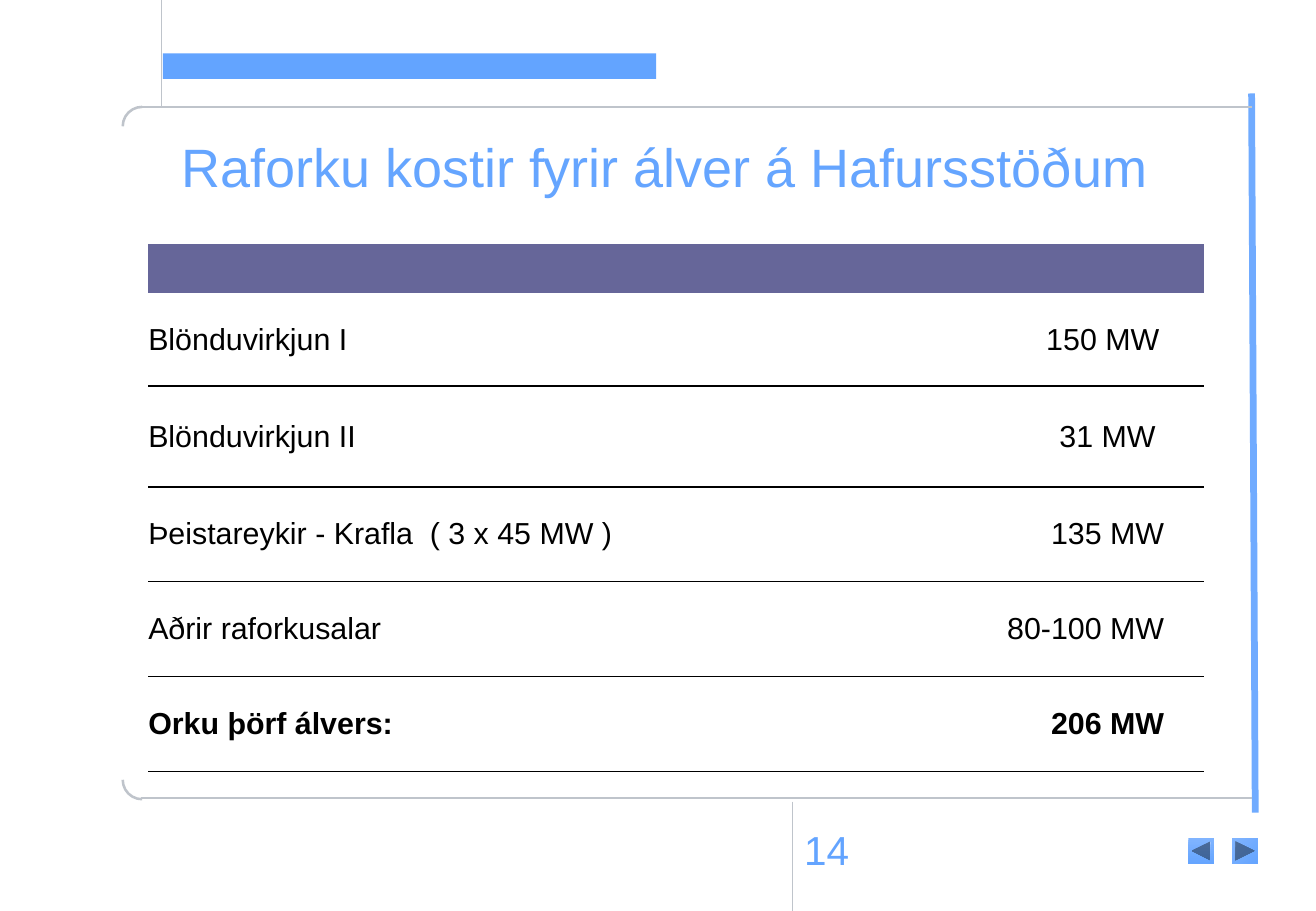
from lxml import etree
from pptx import Presentation
from pptx.dml.color import RGBColor
from pptx.enum.shapes import MSO_CONNECTOR, MSO_SHAPE
from pptx.enum.text import MSO_ANCHOR, MSO_AUTO_SIZE, PP_ALIGN
from pptx.oxml import parse_xml
from pptx.oxml.ns import nsdecls, qn
from pptx.util import Inches, Pt

STRAIGHT = MSO_CONNECTOR.STRAIGHT
RECTANGLE, ARC = MSO_SHAPE.RECTANGLE, MSO_SHAPE.ARC
NEXT = MSO_SHAPE.ACTION_BUTTON_FORWARD_OR_NEXT
PREVIOUS = MSO_SHAPE.ACTION_BUTTON_BACK_OR_PREVIOUS
MIDDLE, NO_AUTOFIT = MSO_ANCHOR.MIDDLE, MSO_AUTO_SIZE.NONE
LEFT, RIGHT = PP_ALIGN.LEFT, PP_ALIGN.RIGHT

FONT, BLUE, PALE_BLUE, GREY = "Arial", "63A4FF", "70ABFF", "BFC4CB"
PURPLE, BLACK = "666699", "000000"
NO_TABLE_STYLE = "{2D5ABB26-0587-4C30-8999-92F81FD0307C}"
ARC_DEGREE = 0.6

POWER_ROWS = [
    ("Blönduvirkjun I", "150 MW", 0.37),
    ("Blönduvirkjun II", "31 MW", 0.4),
    ("Þeistareykir - Krafla  ( 3 x 45 MW )", "135 MW", 0.33),
    ("Aðrir raforkusalar", "80-100 MW", 0.33),
    ("Orku þörf álvers:", "206 MW", 0.33),
]
COLUMN_WIDTHS = [6.75, 1.94]
ROW_HEIGHTS = [0.4, 0.77, 0.83, 0.78, 0.78, 0.78]


def color(value):
    """Turn a hex string into a colour."""
    return RGBColor.from_string(value)


def apply(target, values):
    """Set each attribute named in a dict."""
    for name, value in values.items():
        setattr(target, name, value)


class SlideBuilder:
    """Holds the style and the current slide."""

    def __init__(self, slide, font_name):
        """Keep the slide and its font."""
        self.slide = slide
        self.font_name = font_name

    def set_text(self, frame, text, size, hex_color, bold=False, alignment=LEFT):
        """Fill a text frame with one formatted paragraph."""
        frame.text = text
        paragraph = frame.paragraphs[0]
        paragraph.alignment = alignment
        apply(paragraph.font, {"name": self.font_name, "size": Pt(size), "bold": bold})
        paragraph.font.color.rgb = color(hex_color)

    def title(self, text, box, size, hex_color):
        """Place and format the title placeholder."""
        title = self.slide.shapes.title
        apply(title, dict(zip(("left", "top", "width", "height"), map(Inches, box))))
        apply(title.text_frame, {"vertical_anchor": MIDDLE, "word_wrap": True,
                                 "auto_size": NO_AUTOFIT})
        self.set_text(title.text_frame, text, size, hex_color)

    def text(self, text, box, size, hex_color):
        """Add a wrapping text box."""
        shape = self.slide.shapes.add_textbox(*map(Inches, box))
        shape.text_frame.word_wrap = True
        self.set_text(shape.text_frame, text, size, hex_color)

    def line(self, start, end, hex_color, width):
        """Add a straight line without shadow."""
        connector = self.slide.shapes.add_connector(STRAIGHT, *map(Inches, start + end))
        connector.line.color.rgb = color(hex_color)
        connector.line.width = Pt(width)
        etree.SubElement(connector._element.spPr, qn("a:effectLst"))

    def shape(self, kind, box):
        """Add a preset shape without shadow or outline."""
        shape = self.slide.shapes.add_shape(kind, *map(Inches, box))
        shape.shadow.inherit = False
        shape.line.fill.background()
        return shape

    def bar(self, box, hex_color):
        """Add a solid rectangle."""
        fill = self.shape(RECTANGLE, box).fill
        fill.solid()
        fill.fore_color.rgb = color(hex_color)

    def corner(self, box, start_degree, hex_color, width):
        """Add a quarter arc starting at an angle."""
        arc = self.shape(ARC, box)
        arc.fill.background()
        arc.line.color.rgb = color(hex_color)
        arc.line.width = Pt(width)
        arc.adjustments[0] = start_degree * ARC_DEGREE
        arc.adjustments[1] = (start_degree + 90) * ARC_DEGREE

    def button(self, kind, box, angle):
        """Add a navigation button with a blue gradient."""
        fill = self.shape(kind, box).fill
        fill.gradient()
        fill.gradient_angle = angle
        for stop, hex_color in zip(fill.gradient_stops, ("80B4FF", "65A5FF")):
            stop.color.rgb = color(hex_color)

    def bottom_border(self, cell, hex_color, width):
        """Draw the lower edge of a cell."""
        cell._tc.get_or_add_tcPr().insert(0, parse_xml(
            f'<a:lnB {nsdecls("a")} w="{Pt(width)}"><a:solidFill>'
            f'<a:srgbClr val="{hex_color}"/></a:solidFill></a:lnB>'))

    def table(self, rows, left, top, widths, heights):
        """Add a ruled table under a plain header band."""
        size = (left, top, sum(widths), sum(heights))
        table = self.slide.shapes.add_table(
            len(heights), len(widths), *map(Inches, size)).table
        apply(table, {"first_row": False, "horz_banding": False})
        table._tbl.tblPr.find(qn("a:tableStyleId")).text = NO_TABLE_STYLE
        for column, width in zip(table.columns, widths):
            column.width = Inches(width)
        for row, height in zip(table.rows, heights):
            row.height = Inches(height)
        for cell in table.iter_cells():
            apply(cell, {"margin_left": 0, "margin_right": 0, "margin_top": 0,
                         "margin_bottom": 0, "vertical_anchor": MIDDLE})
        for cell in table.rows[0].cells:
            cell.fill.solid()
            cell.fill.fore_color.rgb = color(PURPLE)
        for index, (label, value, indent) in enumerate(rows, start=1):
            bold = index == len(rows)
            cells = table.rows[index].cells
            for cell, text, alignment in zip(cells, (label, value), (LEFT, RIGHT)):
                self.set_text(cell.text_frame, text, 18, BLACK, bold, alignment)
                cell.fill.background()
                self.bottom_border(cell, BLACK, 1)
            cells[1].margin_right = Inches(indent)


def main():
    """Build and save the slide."""
    presentation = Presentation()
    apply(presentation, {"slide_width": Inches(10.83), "slide_height": Inches(7.5)})
    slide = presentation.slides.add_slide(presentation.slide_layouts[5])
    builder = SlideBuilder(slide, FONT)

    builder.line((10.3, 0.77), (10.33, 6.69), PALE_BLUE, 4)
    for top, edge, start_degree in ((0.88, 0.88, 180), (6.26, 6.57, 90)):
        builder.corner((1.01, top, 0.32, 0.32), start_degree, GREY, 1.5)
        builder.line((1.16, edge), (10.3, edge), GREY, 1.5)
    builder.line((1.33, 0), (1.33, 0.88), GREY, 0.75)
    builder.line((6.52, 6.6), (6.52, 7.5), GREY, 0.75)
    builder.bar((1.34, 0.44, 4.06, 0.21), BLUE)
    for kind, left, angle in ((NEXT, 10.14, 315), (PREVIOUS, 9.78, 270)):
        builder.button(kind, (left, 6.9, 0.21, 0.21), angle)

    builder.text("14", (6.52, 6.74, 1.26, 0.52), 24, BLUE)
    builder.title("Raforku kostir fyrir álver á Hafursstöðum",
                  (1.39, 1.1, 8.82, 0.53), 32, "65A5FF")
    builder.table(POWER_ROWS, 1.22, 2.01, COLUMN_WIDTHS, ROW_HEIGHTS)
    presentation.save("out.pptx")


if __name__ == "__main__":
    main()
